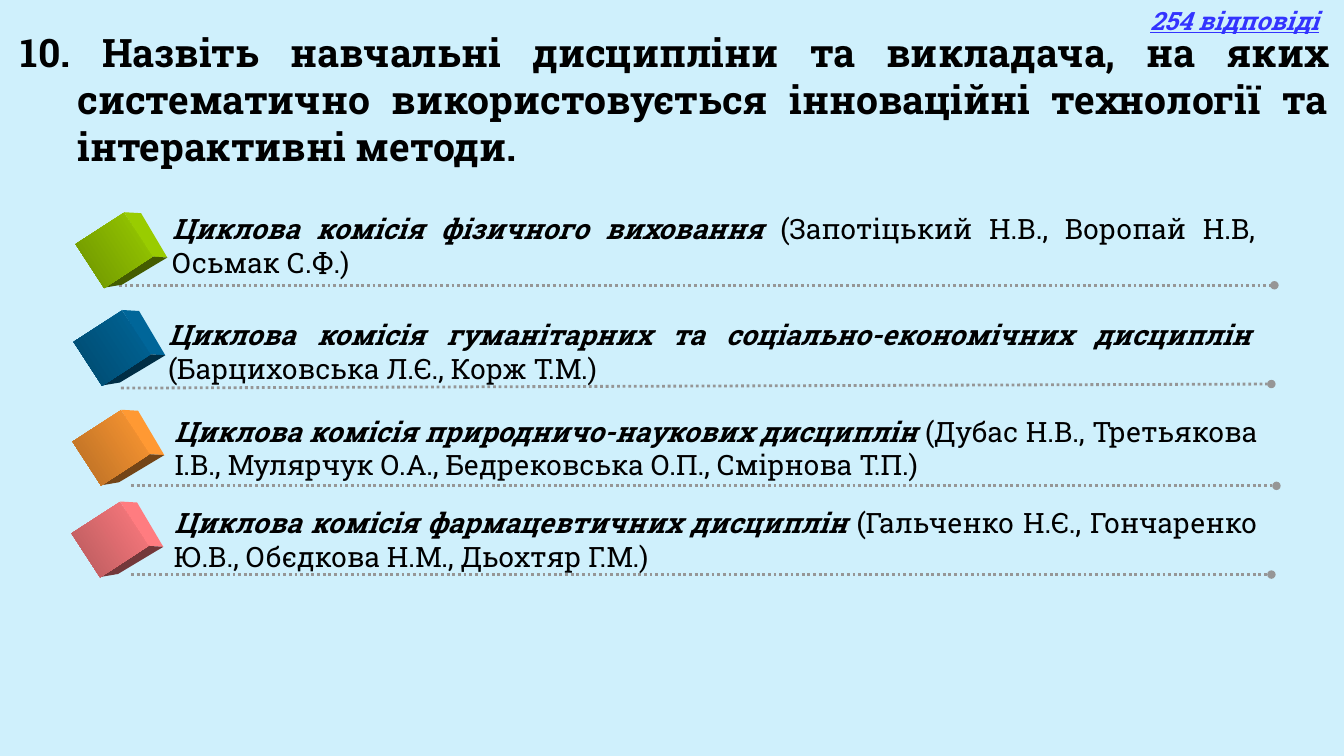
from lxml import etree
from pptx import Presentation
from pptx.dml.color import RGBColor
from pptx.enum.dml import MSO_LINE
from pptx.enum.shapes import MSO_CONNECTOR, MSO_SHAPE
from pptx.enum.text import MSO_AUTO_SIZE, PP_ALIGN
from pptx.oxml.ns import qn
from pptx.util import Inches, Pt

STRAIGHT = MSO_CONNECTOR.STRAIGHT
RECTANGLE = MSO_SHAPE.RECTANGLE
DOTTED = MSO_LINE.ROUND_DOT
GROW = MSO_AUTO_SIZE.SHAPE_TO_FIT_TEXT
LEFT = PP_ALIGN.LEFT
JUSTIFY = PP_ALIGN.JUSTIFY

SKY = RGBColor(0xCF, 0xF0, 0xFC)
BLACK = RGBColor(0x00, 0x00, 0x00)
BLUE = RGBColor(0x33, 0x33, 0xFF)
GRAY = RGBColor(0x96, 0x96, 0x96)
GREEN = (RGBColor(0x99, 0xCC, 0x00), RGBColor(0x6D, 0x92, 0x00), RGBColor(0x44, 0x5C, 0x00))
NAVY = (RGBColor(0x00, 0x66, 0x99), RGBColor(0x00, 0x49, 0x6D), RGBColor(0x00, 0x2E, 0x45))
ORANGE = (RGBColor(0xFF, 0x99, 0x33), RGBColor(0xB6, 0x6D, 0x24), RGBColor(0x73, 0x45, 0x17))
PINK = (RGBColor(0xFF, 0x7C, 0x80), RGBColor(0xB6, 0x59, 0x5C), RGBColor(0x73, 0x38, 0x3A))

CUBE_WIDTH, CUBE_HEIGHT = 0.52, 0.57
RIGHT_FACE = [(0.1, -0.38), (0.27, -0.37), (0.53, 0.07), (0.37, 0.06)]
BOTTOM_FACE = [(0.37, 0.06), (0.53, 0.07), (0.08, 0.34), (-0.1, 0.37)]

COMMISSIONS = [
    ("Циклова комісія фізичного виховання ",
     "(Запотіцький Н.В., Воропай Н.В, Осьмак С.Ф.)",
     GREEN, (0.87, 2.2), (1.61, 2.05), (1.18, 2.83, 12.64, 2.83)),
    ("Циклова комісія гуманітарних та соціально-економічних дисциплін ",
     "(Барциховська Л.Є., Корж Т.М.)",
     NAVY, (0.85, 3.17), (1.57, 3.1), (1.2, 3.85, 12.61, 3.81)),
    ("Циклова комісія природничо-наукових дисциплін ",
     "(Дубас Н.В., Третьякова І.В., Мулярчук О.А., Бедрековська О.П., Смірнова Т.П.)",
     ORANGE, (0.84, 4.16), (1.63, 4.06), (1.3, 4.82, 12.66, 4.82)),
    ("Циклова комісія фармацевтичних дисциплін ",
     "(Гальченко Н.Є., Гончаренко Ю.В., Обєдкова Н.М., Дьохтяр Г.М.)",
     PINK, (0.83, 5.07), (1.63, 4.97), (1.3, 5.7, 12.61, 5.7)),
]


class SlideBuilder:
    font_name = "Roboto Slab"

    def __init__(self, slide):
        self.slide = slide
        self.shapes = slide.shapes

    def background(self, color):
        fill = self.slide.background.fill
        fill.solid()
        fill.fore_color.rgb = color

    def text(self, text, left, top, width, height, size=20, color=BLACK,
             bold=True, italic=False, underline=None, align=JUSTIFY, hanging=0, plain=""):
        frame = self.shapes.add_textbox(
            Inches(left), Inches(top), Inches(width), Inches(height)).text_frame
        frame.word_wrap = True
        frame.auto_size = GROW
        paragraph = frame.paragraphs[0]
        paragraph.alignment = align
        if hanging:
            properties = paragraph._p.get_or_add_pPr()
            properties.set("marL", str(Inches(hanging)))
            properties.set("indent", str(Inches(-hanging)))
        for content, is_bold, is_italic in ((text, bold, italic), (plain, False, False)):
            if content:
                run = paragraph.add_run()
                run.text = content
                font = run.font
                font.name = self.font_name
                font.size = Pt(size)
                font.color.rgb = color
                font.bold = is_bold
                font.italic = is_italic
                font.underline = underline

    def dotted_line(self, *ends):
        connector = self.shapes.add_connector(STRAIGHT, *(Inches(end) for end in ends))
        connector.line.color.rgb = GRAY
        connector.line.width = Pt(2)
        connector.line.dash_style = DOTTED
        outline = connector.line._get_or_add_ln()
        etree.SubElement(outline, qn("a:tailEnd")).set("type", "oval")
        etree.SubElement(connector._element.spPr, qn("a:effectLst"))

    def face(self, center_x, center_y, offsets, color):
        points = [(Inches(center_x + x), Inches(center_y + y)) for x, y in offsets]
        builder = self.shapes.build_freeform(*points[0])
        builder.add_line_segments(points[1:], close=True)
        shape = builder.convert_to_shape()
        shape.shadow.inherit = False
        shape.fill.solid()
        shape.fill.fore_color.rgb = color
        shape.line.fill.background()

    def cube(self, left, top, colors):
        light, medium, dark = colors
        center = (left + CUBE_WIDTH / 2, top + CUBE_HEIGHT / 2)
        self.face(*center, RIGHT_FACE, light)
        self.face(*center, BOTTOM_FACE, dark)
        front = self.shapes.add_shape(
            RECTANGLE, Inches(left), Inches(top), Inches(CUBE_WIDTH), Inches(CUBE_HEIGHT))
        front.rotation = 57
        front.shadow.inherit = False
        front.line.fill.background()
        front.fill.gradient()
        front.fill.gradient_angle = 270
        for stop, color in zip(front.fill.gradient_stops, (light, medium)):
            stop.color.rgb = color


def main():
    presentation = Presentation()
    presentation.slide_width = Inches(13.33)
    presentation.slide_height = Inches(7.5)
    builder = SlideBuilder(presentation.slides.add_slide(presentation.slide_layouts[6]))
    builder.background(SKY)
    builder.text("254 відповіді", 11.31, 0, 2.02, 0.4, size=18, color=BLUE,
                 italic=True, underline=True, align=LEFT)
    builder.text("10. Назвіть навчальні дисципліни та викладача, на яких систематично "
                 "використовується інноваційні технології та інтерактивні методи.",
                 0.11, 0.23, 13.15, 1.51, size=28, hanging=0.56)
    for name, teachers, colors, cube_at, text_at, line_ends in COMMISSIONS:
        builder.dotted_line(*line_ends)
        builder.cube(*cube_at, colors)
        builder.text(name, *text_at, 10.94, 0.77, italic=True, plain=teachers)
    presentation.save("out.pptx")


if __name__ == "__main__":
    main()
